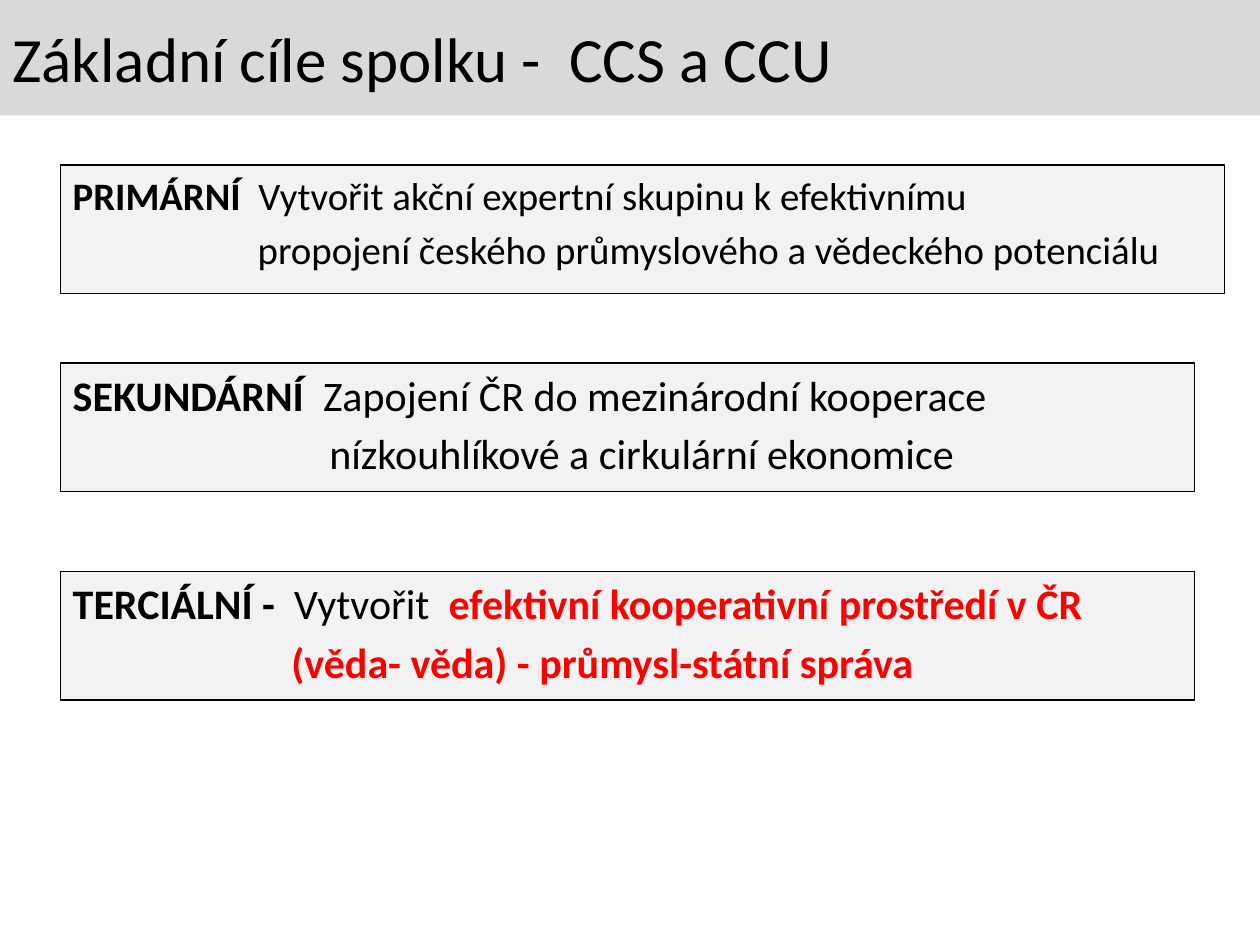
import pptx
import pptx.util
import pptx.dml.color
import pptx.enum.shapes
import pptx.enum.text

Pt = pptx.util.Pt
COLORS = {"text": "000000", "accent": "FF0000", "banner": "D9D9D9",
          "box": "F2F2F2", "border": "000000"}
FONT = "Calibri"

# Content: each line is a list of (text, bold, color) runs
TITLE = "Základní cíle spolku -  CCS a CCU"
GOALS = [
    {"top": 94.3, "width": 665.3, "size": 22.2, "indent": 105.7, "lines": [
        [("PRIMÁRNÍ  ", True, "text"),
         ("Vytvořit akční expertní skupinu k efektivnímu", False, "text")],
        [("propojení českého průmyslového a vědeckého potenciálu", False, "text")]]},
    {"top": 207.4, "width": 648, "size": 24, "indent": 146.6, "lines": [
        [("SEKUNDÁRNÍ ", True, "text"),
         (" Zapojení ČR do mezinárodní kooperace", False, "text")],
        [("nízkouhlíkové a cirkulární ekonomice", False, "text")]]},
    {"top": 326.6, "width": 648, "size": 24, "indent": 124.9, "lines": [
        [("TERCIÁLNÍ - ", True, "text"), (" Vytvořit  ", False, "text"),
         ("efektivní kooperativní prostředí v ČR", True, "accent")],
        [("(věda- věda) - průmysl-státní správa", True, "accent")]]},
]
BOX_LEFT, BOX_HEIGHT = 34.5, 73.5
BANNER_HEIGHT = 66


def rgb(name):
    return pptx.dml.color.RGBColor.from_string(COLORS[name])


def fill_shape(shape, color):
    shape.fill.solid()
    shape.fill.fore_color.rgb = rgb(color)


def prepare_frame(shape, anchor):
    frame = shape.text_frame
    frame.word_wrap = True
    frame.auto_size = pptx.enum.text.MSO_AUTO_SIZE.NONE
    frame.vertical_anchor = anchor
    return frame


def add_text(paragraph, text, size=24, bold=False, color="text"):
    paragraph.alignment = pptx.enum.text.PP_ALIGN.LEFT
    run = paragraph.add_run()
    run.text = text
    run.font.name = FONT
    run.font.size = Pt(size)
    run.font.bold = bold
    run.font.color.rgb = rgb(color)


def add_goal(slide, goal):
    shape = slide.shapes.add_shape(
        pptx.enum.shapes.MSO_SHAPE.RECTANGLE,
        Pt(BOX_LEFT), Pt(goal["top"]), Pt(goal["width"]), Pt(BOX_HEIGHT))
    shape.shadow.inherit = False
    fill_shape(shape, "box")
    shape.line.color.rgb = rgb("border")
    shape.line.width = Pt(0.75)
    frame = prepare_frame(shape, pptx.enum.text.MSO_ANCHOR.TOP)
    for index, line in enumerate(goal["lines"]):
        paragraph = frame.add_paragraph() if index else frame.paragraphs[0]
        paragraph.space_before = Pt(goal["size"] * 0.2)
        if index:  # continuation lines align under the description
            properties = paragraph._p.get_or_add_pPr()
            properties.set("marL", str(Pt(goal["indent"])))
        for text, bold, color in line:
            add_text(paragraph, text, size=goal["size"], bold=bold, color=color)


def main():
    presentation = pptx.Presentation()
    presentation.slide_width, presentation.slide_height = Pt(720), Pt(540)
    slide = presentation.slides.add_slide(presentation.slide_layouts[5])

    # Title banner
    title = slide.shapes.title
    title.left, title.top = Pt(0), Pt(0)
    title.width, title.height = presentation.slide_width, Pt(BANNER_HEIGHT)
    fill_shape(title, "banner")
    frame = prepare_frame(title, pptx.enum.text.MSO_ANCHOR.MIDDLE)
    add_text(frame.paragraphs[0], TITLE, size=36)

    # Goal boxes
    for goal in GOALS:
        add_goal(slide, goal)

    presentation.save("out.pptx")


if __name__ == "__main__":
    main()
